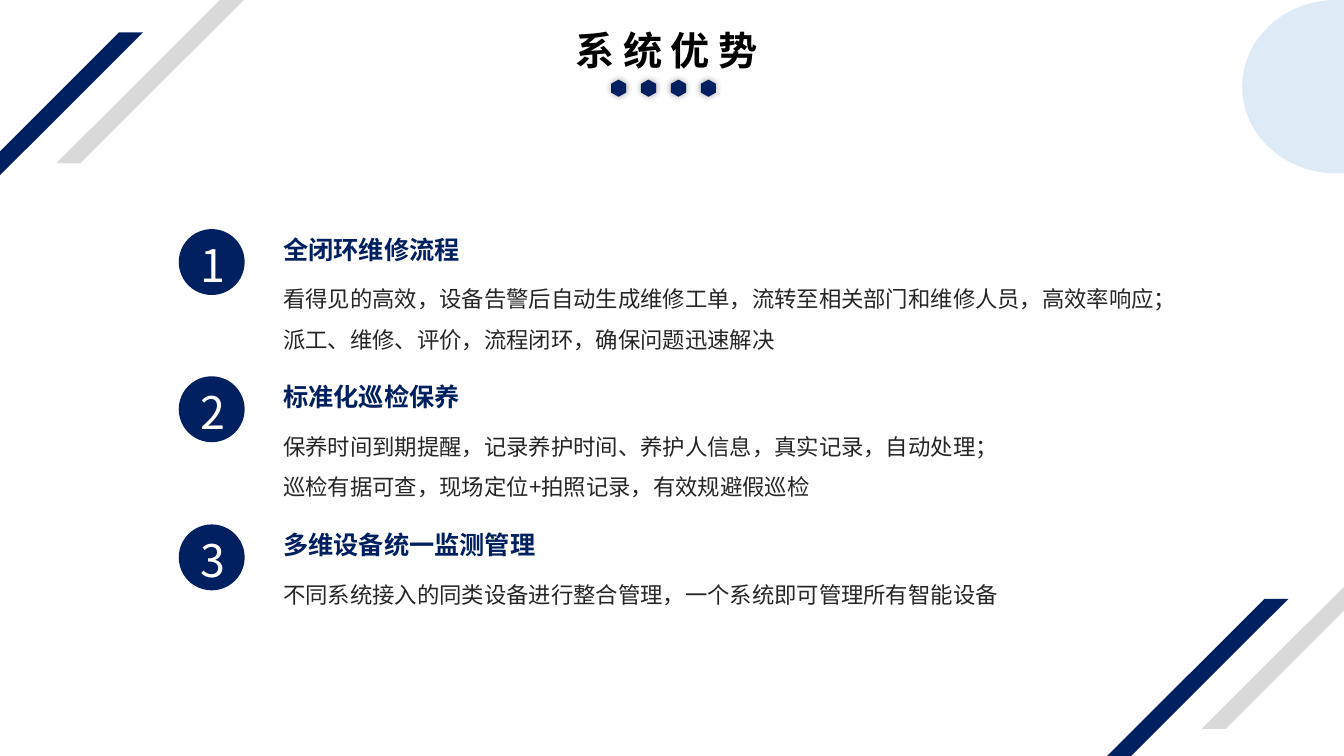
from dataclasses import dataclass
from math import cos, pi, sin

from lxml.etree import SubElement
from pptx import Presentation
from pptx.dml.color import RGBColor
from pptx.enum.shapes import MSO_SHAPE
from pptx.enum.text import MSO_AUTO_SIZE as AutoSize
from pptx.oxml.ns import qn
from pptx.util import Inches, Pt


@dataclass(frozen=True)
class Theme:
    font: str = "Noto Sans CJK SC"
    navy: str = "002060"
    gray: str = "D9D9D9"
    pale: str = "DEEBF7"
    white: str = "FFFFFF"
    black: str = "000000"
    body: str = "262626"
    title_size: int = 28
    number_size: int = 32
    heading_size: int = 18
    body_size: int = 16


THEME = Theme()
WIDTH, HEIGHT = 13.33, 7.5
BARS = [
    (-1.41, 0.32, THEME.navy),
    (0.56, -0.97, THEME.gray),
    (9.95, 5.94, THEME.navy),
    (11.92, 4.64, THEME.gray),
]
ADVANTAGES = [
    (2.28, "全闭环维修流程", [
        "看得见的高效，设备告警后自动生成维修工单，流转至相关部门和维修人员，高效率响应；",
        "派工、维修、评价，流程闭环，确保问题迅速解决",
    ]),
    (3.74, "标准化巡检保养", [
        "保养时间到期提醒，记录养护时间、养护人信息，真实记录，自动处理；",
        "巡检有据可查，现场定位+拍照记录，有效规避假巡检",
    ]),
    (5.21, "多维设备统一监测管理", [
        "不同系统接入的同类设备进行整合管理，一个系统即可管理所有智能设备",
    ]),
]


def paint(shape, color):
    shape.shadow.inherit = False
    shape.fill.solid()
    shape.fill.fore_color.rgb = RGBColor.from_string(color)
    shape.line.fill.background()


def add_preset(shapes, kind, bounds, color):
    shape = shapes.add_shape(kind, *map(Inches, bounds))
    paint(shape, color)
    return shape


def add_text(shapes, bounds, lines, size, color, bold=False, wrap=True,
             margins=(0.07, 0.04), line_spacing=None, tracking=None):
    """Add a text box with one paragraph a line; tracking is in points."""
    box = shapes.add_textbox(*map(Inches, bounds))
    frame = box.text_frame
    across, down = map(Inches, margins)
    frame_format = {
        "word_wrap": wrap, "auto_size": AutoSize.SHAPE_TO_FIT_TEXT,
        "margin_left": across, "margin_right": across,
        "margin_top": down, "margin_bottom": down,
    }
    for name, value in frame_format.items():
        setattr(frame, name, value)
    span_format = {"name": THEME.font, "size": Pt(size), "bold": bold}
    for index, line in enumerate(lines):
        para = frame.add_paragraph() if index else frame.paragraphs[0]
        para.line_spacing = line_spacing
        span = para.add_run()
        span.text = line
        for name, value in span_format.items():
            setattr(span.font, name, value)
        span.font.color.rgb = RGBColor.from_string(color)
        properties = span._r.get_or_add_rPr()
        SubElement(properties, qn("a:ea"), typeface=THEME.font)
        if tracking:
            properties.set("spc", str(tracking * 100))


def add_corner_disc(shapes):
    """Draw the disc cut off by the right edge of the slide."""
    center_x, radius_x, radius_y, steps = 13.25, 0.93, 0.86, 72
    points = []
    for step in range(steps):
        angle = 2 * pi * step / steps
        x = min(center_x + radius_x * cos(angle), WIDTH)
        points.append((Inches(x), Inches(radius_y * (1 + sin(angle)))))
    builder = shapes.build_freeform(*points[0])
    builder.add_line_segments(points[1:], close=True)
    paint(builder.convert_to_shape(), THEME.pale)


def add_glow_shadow(shape):
    effects = shape._element.spPr.find(qn("a:effectLst"))
    shadow = SubElement(effects, qn("a:outerShdw"), blurRad=str(Pt(5)),
                        dist="0", dir="0", algn="ctr", rotWithShape="0")
    color = SubElement(shadow, qn("a:srgbClr"), val=THEME.black)
    SubElement(color, qn("a:alpha"), val="40000")


def add_title(shapes):
    add_text(shapes, (5.61, 0.21, 2.11, 0.57), ["系统优势"], THEME.title_size,
             THEME.black, bold=True, wrap=False, margins=(0.1, 0.05), tracking=6)
    for index in range(4):
        bounds = (6.05 + 0.297 * index, 0.8, 0.17, 0.15)
        dot = add_preset(shapes, MSO_SHAPE.HEXAGON, bounds, THEME.navy)
        dot.adjustments[0] = 0.28
        dot.rotation = 90
        add_glow_shadow(dot)


def add_badge(shapes, number, top):
    badge = shapes.add_group_shape().shapes
    disc = add_preset(badge, MSO_SHAPE.OVAL, (1.78, top, 0.64, 0.64), THEME.navy)
    disc.line.color.rgb = RGBColor.from_string(THEME.navy)
    disc.line.width = Pt(1)
    add_text(badge, (1.89, top + 0.03, 0.47, 0.64), [str(number)],
             THEME.number_size, THEME.white, wrap=False, margins=(0.1, 0.05))


def add_advantage(shapes, number, top, heading, lines):
    add_badge(shapes, number, top)
    add_text(shapes, (2.74, top, 3.32, 0.38), [heading],
             THEME.heading_size, THEME.navy, bold=True)
    add_text(shapes, (2.74, top + 0.38, 8.82, 0.02 + 0.41 * len(lines)), lines,
             THEME.body_size, THEME.body, line_spacing=1.5)


def main():
    deck = Presentation()
    deck.slide_width, deck.slide_height = Inches(WIDTH), Inches(HEIGHT)
    page = deck.slides.add_slide(deck.slide_layouts[6])
    shapes = page.shapes
    add_corner_disc(shapes)
    for left, top, color in BARS:
        bar = add_preset(shapes, MSO_SHAPE.PARALLELOGRAM,
                         (left, top, 2.83, 2.59), color)
        bar.adjustments[0] = 1.001
    for number, advantage in enumerate(ADVANTAGES, start=1):
        add_advantage(shapes, number, *advantage)
    add_title(shapes)
    deck.save("out.pptx")


if __name__ == "__main__":
    main()
